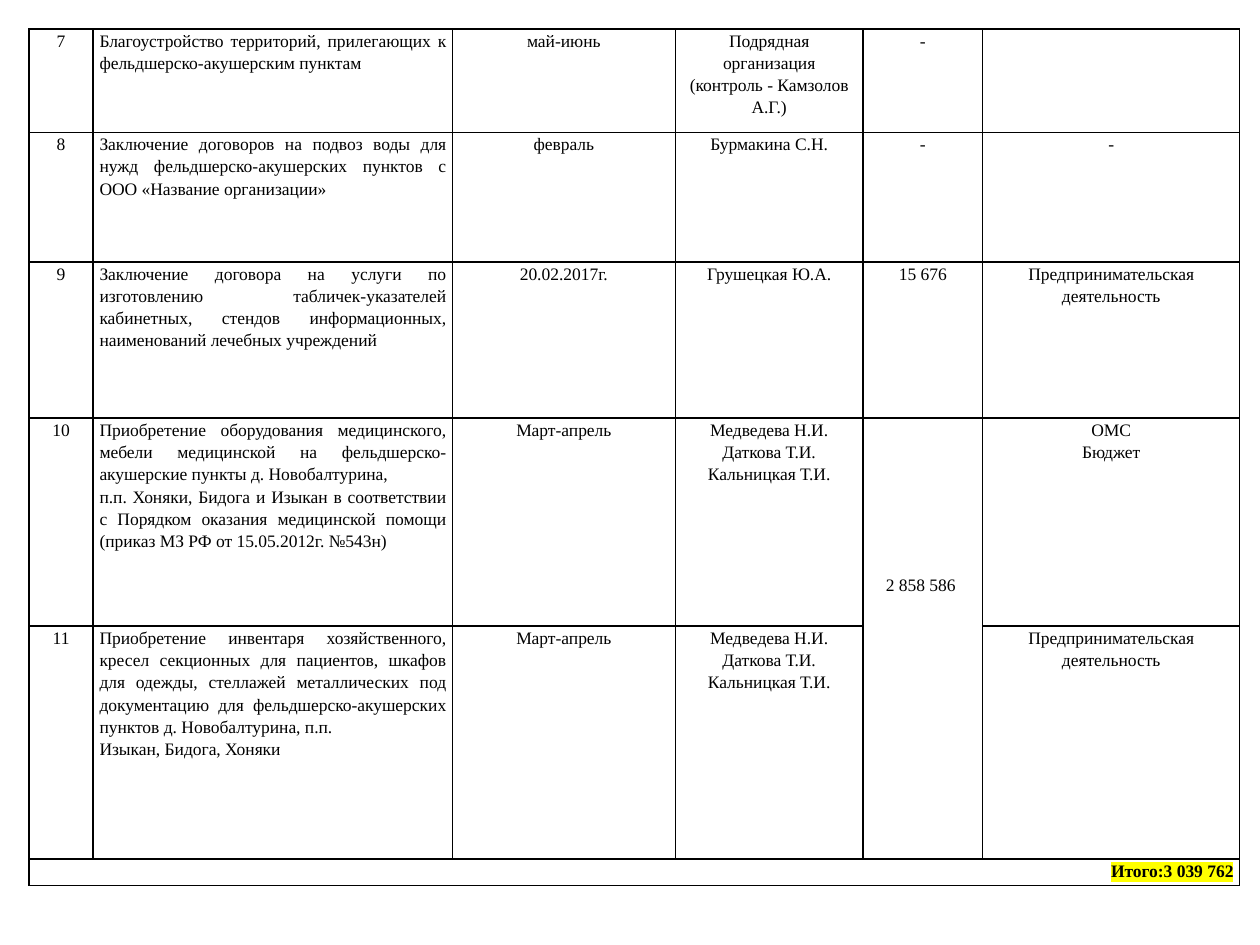
from pptx import Presentation
from pptx.dml.color import RGBColor
from pptx.enum.text import PP_ALIGN as Align
from pptx.oxml.ns import qn
from pptx.util import Inches, Pt
from lxml.etree import SubElement, Element

COLORS = {"ink": "000000", "paper": "FFFFFF", "mark": "FFFF00"}
FONT = "Times New Roman"
PAGE_WIDTH, PAGE_HEIGHT = 10, 7.5
TABLE_BOX = (0.23, 0.23, 9.61, 6.8)
COLUMN_PARTS = (0.51, 2.85, 1.77, 1.49, 0.95, 2.04)
ROW_PARTS = (0.82, 1.03, 1.24, 1.65, 1.85, 0.21)
COST_COLUMN = 4
COST_DROP = 1.23  # lowers the shared cost towards the middle of its two rows

BUYERS = "Медведева Н.И.\nДаткова Т.И.\nКальницкая Т.И."
BUSINESS = "Предпринимательская деятельность"
TASKS = [
    ("7", "Благоустройство территорий, прилегающих к фельдшерско-акушерским пунктам",
     "май-июнь", "Подрядная организация\n(контроль - Камзолов А.Г.)", "-", ""),
    ("8", "Заключение договоров на подвоз воды для нужд фельдшерско-акушерских "
     "пунктов с ООО «Название организации»",
     "февраль", "Бурмакина С.Н.", "-", "-"),
    ("9", "Заключение договора на услуги по изготовлению табличек-указателей "
     "кабинетных, стендов информационных, наименований лечебных учреждений",
     "20.02.2017г.", "Грушецкая Ю.А.", "15 676", BUSINESS),
    ("10", "Приобретение оборудования медицинского, мебели медицинской на "
     "фельдшерско-акушерские пункты д. Новобалтурина,\n"
     "п.п. Хоняки, Бидога и Изыкан в соответствии с Порядком оказания "
     "медицинской помощи (приказ МЗ РФ от 15.05.2012г. №543н)",
     "Март-апрель", BUYERS, "2 858 586 ", "ОМС\nБюджет"),
    ("11", "Приобретение инвентаря хозяйственного, кресел секционных для "
     "пациентов, шкафов для одежды, стеллажей металлических под документацию "
     "для фельдшерско-акушерских пунктов д. Новобалтурина, п.п.\n"
     "Изыкан, Бидога, Хоняки",
     "Март-апрель", BUYERS, "", BUSINESS),
]
TOTAL = "Итого:3 039 762"


def add_borders(cell):
    properties = cell._tc.get_or_add_tcPr()
    for index, side in enumerate(("lnL", "lnR", "lnT", "lnB")):
        line = Element(qn(f"a:{side}"), w=str(Pt(1)))
        fill = SubElement(line, qn("a:solidFill"))
        SubElement(fill, qn("a:srgbClr"), val=COLORS["ink"])
        properties.insert(index, line)


def style_cell(cell):
    cell.fill.solid()
    cell.fill.fore_color.rgb = RGBColor.from_string(COLORS["paper"])
    cell.margin_left = cell.margin_right = Inches(0.05)
    cell.margin_top = cell.margin_bottom = 0
    add_borders(cell)


def write_cell(cell, text, align, bold=False):
    cell.text = text
    for para in cell.text_frame.paragraphs:
        para.alignment = align
        para.line_spacing = 1.15
        para.font.name = FONT
        para.font.size = Pt(10)
        para.font.bold = bold
        para.font.color.rgb = RGBColor.from_string(COLORS["ink"])


def highlight(span):
    mark = SubElement(span.font._element, qn("a:highlight"))
    SubElement(mark, qn("a:srgbClr"), val=COLORS["mark"])


def add_total(table):
    """Fill the last row, joined across all columns."""
    last = len(ROW_PARTS) - 1
    cell = table.cell(last, 0)
    cell.merge(table.cell(last, len(COLUMN_PARTS) - 1))
    write_cell(cell, TOTAL, Align.RIGHT, bold=True)
    highlight(cell.text_frame.paragraphs[0].runs[0])


def add_plan_table(page, box):
    left, top, width, height = map(Inches, box)
    frame = page.shapes.add_table(len(ROW_PARTS), len(COLUMN_PARTS),
                                  left, top, width, height)
    table = frame.table
    table.first_row = table.horz_banding = False
    for column, part in zip(table.columns, COLUMN_PARTS):
        column.width = int(width * part / sum(COLUMN_PARTS))
    for row, part in zip(table.rows, ROW_PARTS):
        row.height = int(height * part / sum(ROW_PARTS))
    for cell in table.iter_cells():
        style_cell(cell)
        write_cell(cell, "", Align.CENTER)

    for row, task in enumerate(TASKS):
        for column, text in enumerate(task):
            align = Align.JUSTIFY if column == 1 else Align.CENTER
            write_cell(table.cell(row, column), text, align)

    shared_cost = table.cell(3, COST_COLUMN)
    shared_cost.merge(table.cell(4, COST_COLUMN))
    shared_cost.margin_top = Inches(COST_DROP)
    add_total(table)


def main():
    deck = Presentation()
    deck.slide_width, deck.slide_height = Inches(PAGE_WIDTH), Inches(PAGE_HEIGHT)
    page = deck.slides.add_slide(deck.slide_layouts[6])
    add_plan_table(page, TABLE_BOX)
    deck.save("out.pptx")


if __name__ == "__main__":
    main()
